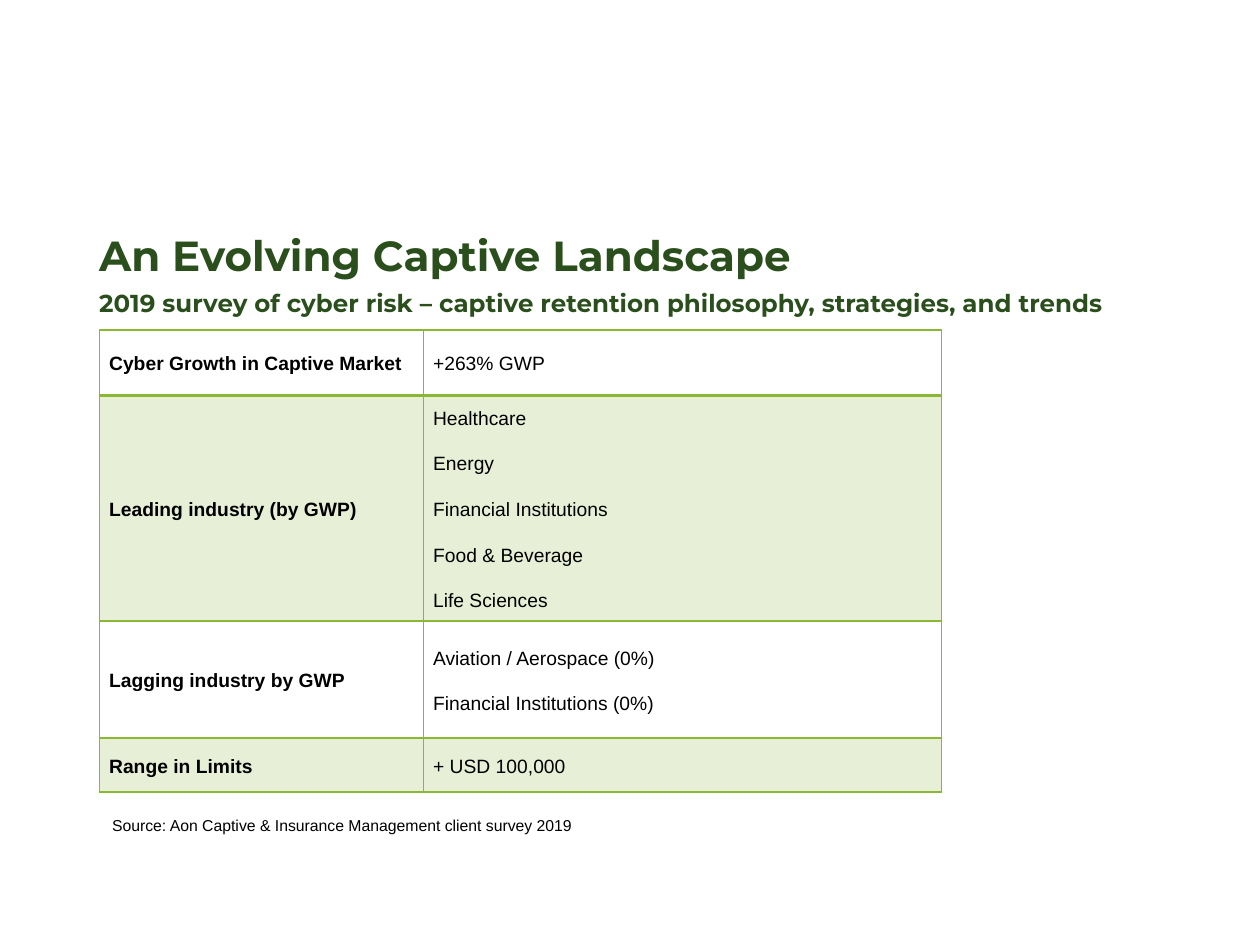
from lxml import etree
from pptx import Presentation
from pptx.dml.color import RGBColor
from pptx.enum.text import MSO_ANCHOR, MSO_AUTO_SIZE
from pptx.oxml.ns import qn
from pptx.util import Cm, Pt

MIDDLE, TOP = MSO_ANCHOR.MIDDLE, MSO_ANCHOR.TOP
GROW = MSO_AUTO_SIZE.SHAPE_TO_FIT_TEXT

# Content
TITLE = "An Evolving Captive Landscape"
SUBTITLE = "2019 survey of cyber risk – captive retention philosophy, strategies, and trends"
SURVEY = [
    ("Cyber Growth in Captive Market", ["+263% GWP"]),
    ("Leading industry (by GWP)", ["Healthcare", "Energy", "Financial Institutions",
                                   "Food & Beverage", "Life Sciences"]),
    ("Lagging industry by GWP", ["Aviation / Aerospace (0%)", "Financial Institutions (0%)"]),
    ("Range in Limits", ["+ USD 100,000"]),
]
SOURCE = "Source: Aon Captive & Insurance Management client survey 2019"

# Look
COLORS = {"heading": "2A4F1C", "text": "000000", "accent": "8AB833"}
BAND_OPACITY = 20
COLUMN_WIDTHS = [6.53, 10.44]
ROW_HEIGHTS = [1.32, 4.55, 2.36, 1.09]
LEFT = 2.01
HEADING_FONT = {"name": "Montserrat", "bold": True}
BODY_FONT = {"name": "Arial", "size": Pt(11)}
HEADING_SPACING = {"line_spacing": 0.9}
CELL_SPACING = {"line_spacing": 1.15, "space_after": Pt(6)}


def apply(target, values):
    for name, value in values.items():
        setattr(target, name, value)


def write(frame, lines, color, spacing):
    """Fill a text frame from (text, font values, space before) lines."""
    for index, (text, font, before) in enumerate(lines):
        para = frame.add_paragraph() if index else frame.paragraphs[0]
        apply(para, spacing)
        para.space_before = Pt(before if index else 0)
        span = para.add_run()
        span.text = text
        apply(span.font, font)
        span.font.color.rgb = RGBColor.from_string(COLORS[color])


def add_text(left, top, width, height, lines, color, spacing):
    box = slide.shapes.add_textbox(Cm(left), Cm(top), Cm(width), Cm(height))
    frame = box.text_frame
    frame.word_wrap = True
    frame.vertical_anchor = TOP
    write(frame, lines, color, spacing)
    return frame


def add_borders(cell, widths):
    properties = cell._tc.get_or_add_tcPr()
    for side in "LRTB":
        line = etree.SubElement(properties, qn(f"a:ln{side}"), w=str(Pt(widths.get(side, 1))))
        fill = etree.SubElement(line, qn("a:solidFill"))
        etree.SubElement(fill, qn("a:srgbClr"), val=COLORS["accent"])


def fill_band(cell):
    cell.fill.solid()
    cell.fill.fore_color.rgb = RGBColor.from_string(COLORS["accent"])
    color = cell._tc.tcPr.find(qn("a:solidFill")).find(qn("a:srgbClr"))
    etree.SubElement(color, qn("a:alpha"), val=str(BAND_OPACITY * 1000))


deck = Presentation()
deck.slide_width, deck.slide_height = Cm(25.4), Cm(19.05)
slide = deck.slides.add_slide(deck.slide_layouts[6])

# Title and subtitle
heading = add_text(1.75, 4.62, 23.11, 1.96,
                   [(TITLE, {**HEADING_FONT, "size": Pt(24)}, 0),
                    (SUBTITLE, {**HEADING_FONT, "size": Pt(14)}, 6)],
                   "heading", HEADING_SPACING)
heading.paragraphs[1].space_after = Pt(6)

# Survey table
table = slide.shapes.add_table(len(SURVEY), len(COLUMN_WIDTHS), Cm(LEFT), Cm(6.65),
                               Cm(sum(COLUMN_WIDTHS)), Cm(sum(ROW_HEIGHTS))).table
table.first_row = table.horz_banding = False
for column, width in zip(table.columns, COLUMN_WIDTHS):
    column.width = Cm(width)
for row, height in zip(table.rows, ROW_HEIGHTS):
    row.height = Cm(height)

CELL_LAYOUT = {"vertical_anchor": MIDDLE, "margin_left": Cm(0.19), "margin_right": Cm(0.19),
               "margin_top": 0, "margin_bottom": 0}
for row_index, (label, values) in enumerate(SURVEY):
    for column_index, texts in enumerate([[label], values]):
        cell = table.cell(row_index, column_index)
        apply(cell, CELL_LAYOUT)
        font = {**BODY_FONT, "bold": column_index == 0}
        write(cell.text_frame, [(text, font, 6) for text in texts], "text", CELL_SPACING)
        # The rule under the first row is twice as thick
        add_borders(cell, {0: {"B": 2}, 1: {"T": 2}}.get(row_index, {}))
        if row_index % 2:
            fill_band(cell)
        else:
            cell.fill.background()

# Source line
source = add_text(LEFT, 16.31, 12.7, 0.64,
                  [(SOURCE, {**BODY_FONT, "size": Pt(9)}, 0)], "text", {})
source.auto_size = GROW

deck.save("out.pptx")
